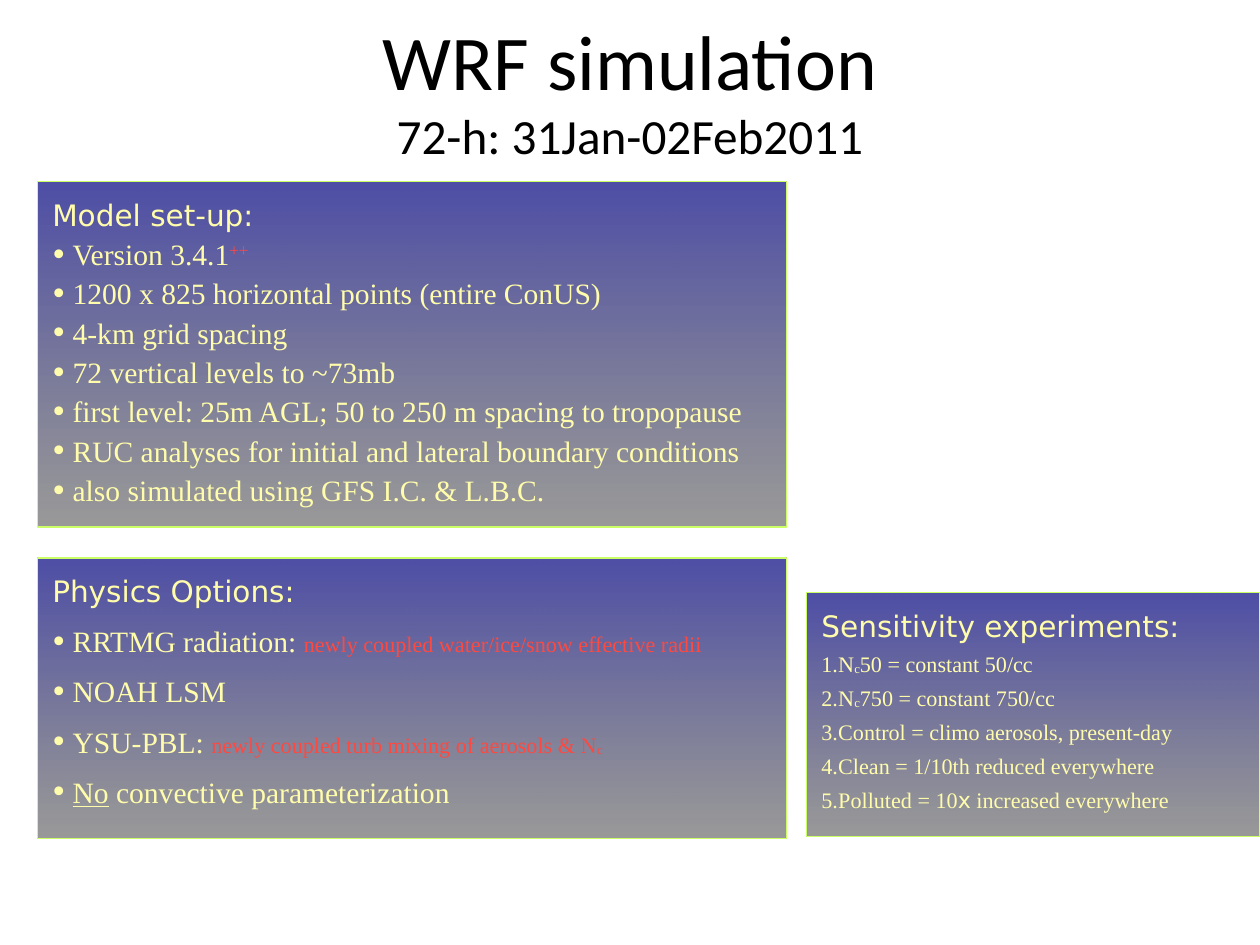
from dataclasses import dataclass, field

from lxml import etree
from pptx import Presentation
from pptx import util as u
from pptx.dml import color
from pptx.enum import shapes, text
from pptx.oxml import ns

SERIF = "Times New Roman"
SANS = "DejaVu Sans"
CREAM = "FFFCAB"
RED = "FE4940"
LINE = "CCFF66"
GRADIENT = (("000080", 70), ("333333", 50))
INSET = 0.17


@dataclass
class Piece:
    words: str
    size: float = 24
    colour: str = CREAM
    font: str = SERIF
    baseline: int = 0
    underline: bool = False


@dataclass
class Panel:
    left: float
    top: float
    width: float
    height: float
    heading: str
    items: list[list[Piece]]
    hanging: float = 0.23
    numbered: bool = False
    spacing: dict = field(default_factory=dict)


def rgb(value: str) -> color.RGBColor:
    return color.RGBColor.from_string(value)


def apply(target, values: dict) -> None:
    for name, value in values.items():
        setattr(target, name, value)


def add_element(parent, tag: str, **attributes: str):
    return etree.SubElement(parent, ns.qn(f"a:{tag}"), attributes)


def add_piece(paragraph, piece: Piece) -> None:
    run = paragraph.add_run()
    run.text = piece.words
    apply(run.font, {"name": piece.font, "size": u.Pt(piece.size)})
    if piece.underline:
        run.font.underline = True
    run.font.color.rgb = rgb(piece.colour)
    if piece.baseline:
        run.font._element.set("baseline", str(piece.baseline * 1000))


def add_bullet(paragraph, hanging: float, numbered: bool) -> None:
    properties = paragraph._p.get_or_add_pPr()
    indent = u.Inches(hanging)
    properties.set("marL", str(indent))
    properties.set("indent", str(-indent))
    if numbered:
        add_element(properties, "buFont", typeface=SERIF)
        add_element(properties, "buAutoNum", type="arabicPeriod")
    else:
        add_element(add_element(properties, "buClr"), "srgbClr", val=CREAM)
        add_element(properties, "buSzPct", val="125000")
        add_element(properties, "buFont", typeface=SERIF)
        add_element(properties, "buChar", char="•")


def add_panel(slide, panel: Panel) -> None:
    box = (panel.left, panel.top, panel.width, panel.height)
    shape = slide.shapes.add_shape(
        shapes.MSO_SHAPE.RECTANGLE, *(u.Inches(length) for length in box))
    shape.shadow.inherit = False
    shape.fill.gradient()
    shape.fill.gradient_angle = 270
    for stop, (colour, opacity) in zip(shape.fill.gradient_stops, GRADIENT):
        stop.color.rgb = rgb(colour)
        colour_element = stop._gs.find(ns.qn("a:srgbClr"))
        add_element(colour_element, "alpha", val=str(opacity * 1000))
    shape.line.color.rgb = rgb(LINE)
    shape.line.width = u.Pt(1)

    frame = shape.text_frame
    sides = ("left", "top", "right", "bottom")
    apply(frame, {f"margin_{side}": u.Inches(INSET) for side in sides})
    apply(frame, {"word_wrap": True, "vertical_anchor": text.MSO_ANCHOR.TOP})
    heading = frame.paragraphs[0]
    heading.alignment = text.PP_ALIGN.LEFT
    add_piece(heading, Piece(panel.heading, font=SANS))
    for item in panel.items:
        paragraph = frame.add_paragraph()
        add_bullet(paragraph, panel.hanging, panel.numbered)
        apply(paragraph, {"alignment": text.PP_ALIGN.LEFT, **panel.spacing})
        for piece in item:
            add_piece(paragraph, piece)


def set_title(slide, lines: list[Piece]) -> None:
    title = slide.shapes.title
    apply(title, {"left": u.Inches(1.39), "top": u.Inches(0.09),
                  "width": u.Inches(11.44), "height": u.Inches(1.82)})
    frame = title.text_frame
    apply(frame, {"word_wrap": True, "auto_size": text.MSO_AUTO_SIZE.NONE,
                  "vertical_anchor": text.MSO_ANCHOR.MIDDLE})
    for index, line in enumerate(lines):
        paragraph = frame.add_paragraph() if index else frame.paragraphs[0]
        paragraph.alignment = text.PP_ALIGN.CENTER
        add_piece(paragraph, line)


def small(words: str, **values) -> Piece:
    return Piece(words, size=18, **values)


TITLE = [
    Piece("WRF simulation", 63, "000000", "Calibri"),
    Piece("72-h: 31Jan-02Feb2011", 40, "000000", "Calibri"),
]

PANELS = [
    Panel(0.42, 6.3, 8.46, 3.17, "Physics Options:", [
        [Piece("RRTMG radiation: "),
         small("newly coupled water/ice/snow effective radii", colour=RED)],
        [Piece("NOAH LSM")],
        [Piece("YSU-PBL: "),
         small("newly coupled turb mixing of aerosols & N", colour=RED),
         small("c", colour=RED, baseline=-6)],
        [Piece("No", underline=True), Piece(" convective parameterization")],
    ], spacing={"space_before": u.Pt(12)}),
    Panel(0.42, 2.05, 8.46, 3.9, "Model set-up:", [
        [Piece("Version 3.4.1"), Piece("++", colour=RED, baseline=32)],
        [Piece("1200 x 825 horizontal points (entire ConUS)")],
        [Piece("4-km grid spacing")],
        [Piece("72 vertical levels to ~73mb")],
        [Piece("first level: 25m AGL; 50 to 250 m spacing to tropopause")],
        [Piece("RUC analyses for initial and lateral boundary conditions")],
        [Piece("also simulated using GFS I.C. & L.B.C.")],
    ], spacing={"line_spacing": u.Pt(32)}),
    Panel(9.1, 6.69, 5.12, 2.76, "Sensitivity experiments:", [
        [small("N"), small("c", baseline=-6), small("50 = constant 50/cc")],
        [small("N"), small("c", baseline=-6), small("750 = constant 750/cc")],
        [small("Control = climo aerosols, present-day")],
        [small("Clean = 1/10th reduced everywhere")],
        [small("Polluted = 10"), small("x", font=SANS),
         small(" increased everywhere")],
    ], hanging=0.19, numbered=True, spacing={"space_before": u.Pt(6)}),
]


def main() -> None:
    presentation = Presentation()
    apply(presentation, {"slide_width": u.Inches(14.22),
                         "slide_height": u.Inches(10.67)})
    slide = presentation.slides.add_slide(presentation.slide_layouts[5])
    set_title(slide, TITLE)
    for panel in PANELS:
        add_panel(slide, panel)
    presentation.save("out.pptx")


if __name__ == "__main__":
    main()
